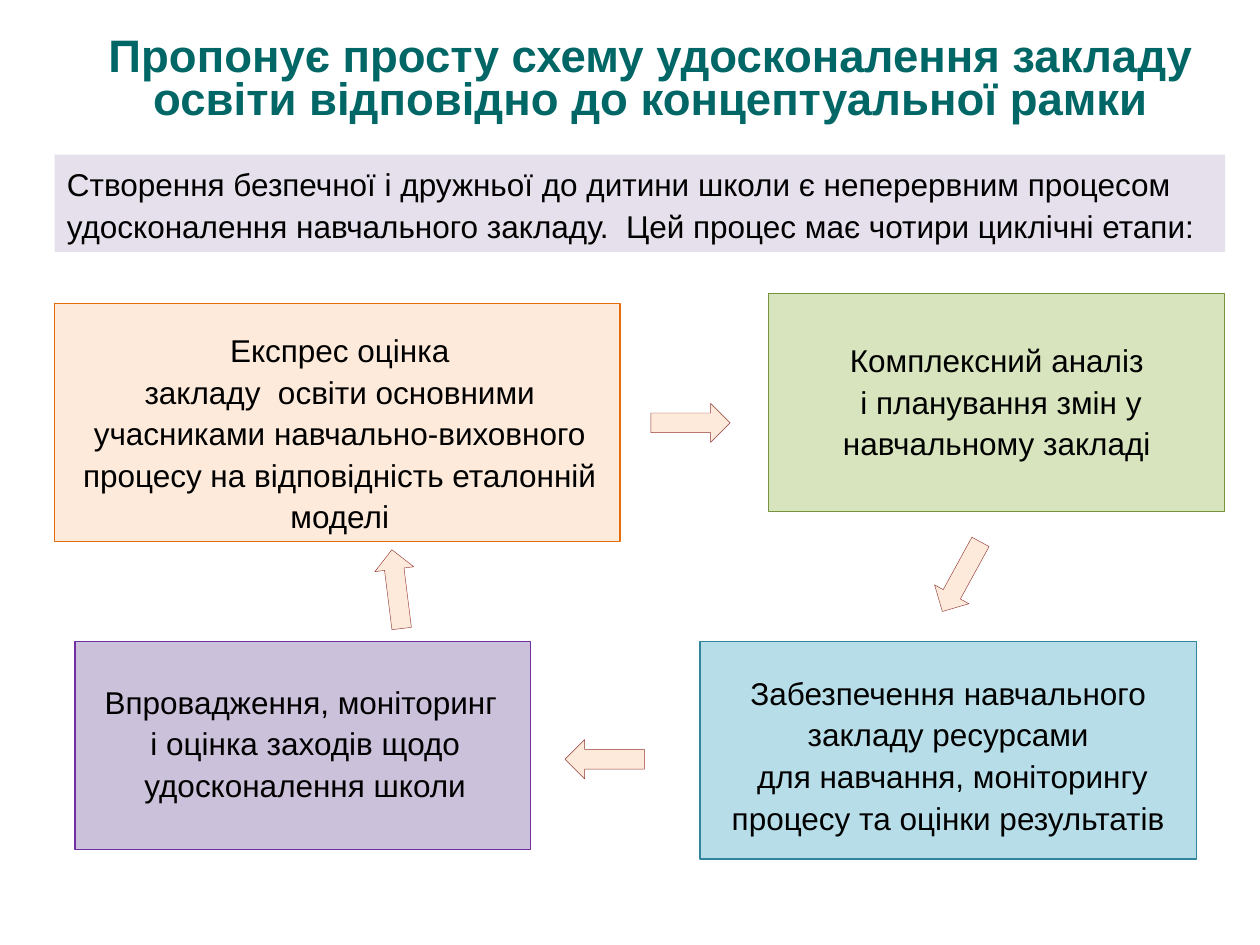
from pptx import Presentation
from pptx import util as u
from pptx.dml.color import RGBColor
from pptx.enum import shapes, text

HUES = {
    "title": "006666", "ink": "000000", "intro": "E6E0EC",
    "peach": "FDEADA", "orange": "E46C0A", "brick": "953735",
    "lime": "D7E4BD", "green": "77933C",
    "lilac": "CCC1DA", "purple": "7030A0",
    "sky": "B7DEE8", "teal": "31859C",
}

STEPS = [
    ("Експрес оцінка\nзакладу  освіти основними учасниками навчально-виховного "
     "процесу на відповідність еталонній моделі",
     (0, 0.2, 11.4, 4.8), "peach", "orange", 0.48, 0.1),
    ("Комплексний аналіз\v і планування змін у навчальному закладі",
     (14.4, 0, 9.19, 4.39), "lime", "green", 0.88, 0),
    ("Забезпечення навчального закладу ресурсами\v для навчання, моніторингу "
     "процесу та оцінки результатів",
     (13.01, 7.01, 10.01, 4.39), "sky", "teal", 0.58, 0),
    ("Впровадження, моніторинг \vі оцінка заходів щодо удосконалення школи",
     (0.41, 7.01, 9.19, 4.19), "lilac", "purple", 0.76, 0.1),
]

ARROWS = [(12.02, 2.21, 0), (17.48, 5.31, 118.7),
          (10.29, 8.99, 180), (6.1, 5.56, 262.9)]


def hue(name):
    return RGBColor.from_string(HUES[name])


def write(shape, words, size=18, color="ink", bold=False, align="CENTER",
          anchor="TOP", lines=1.1, before=0, left=0, top=0.13):
    frame = shape.text_frame
    frame.word_wrap = True
    frame.vertical_anchor = getattr(text.MSO_ANCHOR, anchor)
    frame.margin_top = u.Cm(top)
    frame.text = words
    for para in frame.paragraphs:
        para.alignment = getattr(text.PP_ALIGN, align)
        para.line_spacing = lines
        para.space_before = u.Pt(before)
        para._p.get_or_add_pPr().set("marL", str(u.Cm(left)))
        for run in para.runs:
            font = run.font
            font.name, font.size, font.bold = "Arial", u.Pt(size), bold
            font.color.rgb = hue(color)


def draw(slide, kind, box, fill, line=None, width=0.75):
    shape = slide.shapes.add_shape(kind, *map(u.Cm, box))
    shape.shadow.inherit = False
    shape.fill.solid()
    shape.fill.fore_color.rgb = hue(fill)
    if line:
        shape.line.color.rgb = hue(line)
        shape.line.width = u.Pt(width)
    else:
        shape.line.fill.background()
    return shape


def head(slide, box):
    title = slide.shapes.title
    title.left, title.top, title.width, title.height = map(u.Cm, box)
    write(title, "Пропонує просту схему удосконалення закладу освіти "
          "відповідно до концептуальної рамки", size=26, color="title",
          bold=True, anchor="MIDDLE", lines=0.8, before=6, left=0.25)


def intro(slide, box):
    shape = draw(slide, shapes.MSO_SHAPE.RECTANGLE, box, "intro")
    write(shape, "Створення безпечної і дружньої до дитини школи є неперервним "
          "процесом удосконалення навчального закладу.  Цей процес має чотири "
          "циклічні етапи:", align="LEFT")


def cycle(slide, x, y):
    for words, (dx, dy, w, h), fill, line, top, left in STEPS:
        step = draw(slide, shapes.MSO_SHAPE.RECTANGLE,
                    (x + dx, y + dy, w, h), fill, line)
        write(step, words, top=top, left=left)
    for dx, dy, turn in ARROWS:
        arrow = draw(slide, shapes.MSO_SHAPE.RIGHT_ARROW,
                     (x + dx, y + dy, 1.6, 0.79), "peach", "brick", 0.25)
        arrow.rotation = turn


def main():
    deck = Presentation()
    deck.slide_width, deck.slide_height = u.Cm(25.4), u.Cm(19.05)
    slide = deck.slides.add_slide(deck.slide_layouts[5])
    head(slide, (1.1, 0.13, 23.8, 3))
    intro(slide, (1.1, 3.12, 23.6, 1.96))
    cycle(slide, 1.1, 5.92)
    deck.save("out.pptx")


if __name__ == "__main__":
    main()
